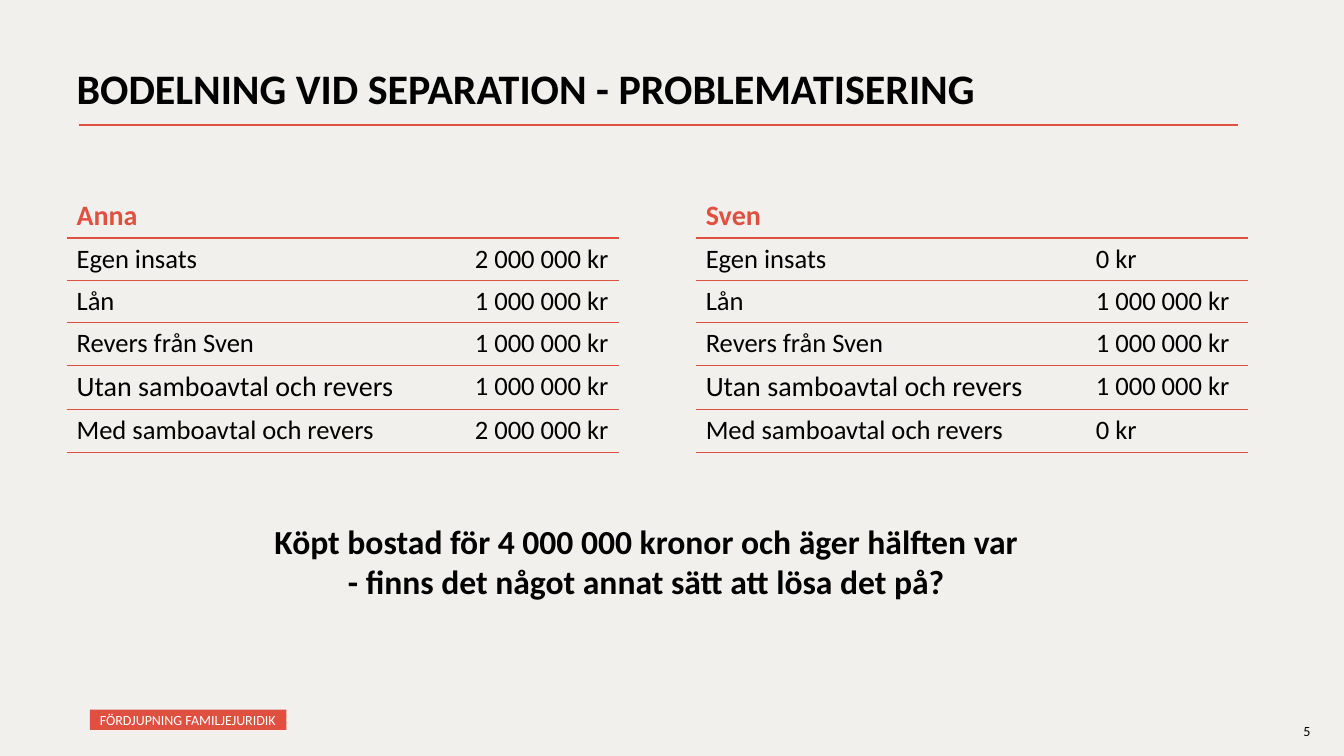
import pptx
import pptx.dml.color
import pptx.enum.shapes
import pptx.enum.text
import pptx.oxml
import pptx.oxml.ns
import pptx.util

Inches = pptx.util.Inches
Pt = pptx.util.Pt
RGBColor = pptx.dml.color.RGBColor
PP_ALIGN = pptx.enum.text.PP_ALIGN
ANCHOR = pptx.enum.text.MSO_ANCHOR
AUTO_SIZE = pptx.enum.text.MSO_AUTO_SIZE

PAPER = RGBColor(0xF1, 0xF0, 0xEC)
CORAL = RGBColor(0xE0, 0x50, 0x40)
BLACK = RGBColor(0, 0, 0)
WHITE = RGBColor(0xFF, 0xFF, 0xFF)
FONT = "Calibri"
NO_STYLE = "{2D5ABB26-0587-4C30-8999-92F81FD0307C}"

LABELS = ["Egen insats", "Lån", "Revers från Sven",
          "Utan samboavtal och revers", "Med samboavtal och revers"]
LARGER_LABEL = "Utan samboavtal och revers"
ANNA_AMOUNTS = ["2 000 000 kr", "1 000 000 kr", "1 000 000 kr",
                "1 000 000 kr", "2 000 000 kr"]
SVEN_AMOUNTS = ["0 kr", "1 000 000 kr", "1 000 000 kr", "1 000 000 kr", "0 kr"]


def place(shape, box):
    shape.left, shape.top, shape.width, shape.height = map(Inches, box)


def add_text(para, text, size, color=BLACK, bold=False):
    span = para.add_run()
    span.text = text
    span.font.name = FONT
    span.font.size = Pt(size)
    span.font.bold = bold
    span.font.color.rgb = color


def add_title(page, box, text):
    title = page.shapes.title
    place(title, box)
    frame = title.text_frame
    frame.auto_size = AUTO_SIZE.NONE
    frame.vertical_anchor = ANCHOR.TOP
    para = frame.paragraphs[0]
    para.alignment = PP_ALIGN.LEFT
    para.line_spacing = 0.9
    add_text(para, text, 30, bold=True)


def add_title_rule(page, left, right, top):
    rule = page.shapes.add_connector(
        pptx.enum.shapes.MSO_CONNECTOR.STRAIGHT,
        Inches(left), Inches(top), Inches(right), Inches(top))
    rule.line.color.rgb = CORAL
    rule.line.width = Pt(1.5)
    rule._element.spPr.append(pptx.oxml.parse_xml(
        f'<a:effectLst {pptx.oxml.ns.nsdecls("a")}/>'))


def add_course_tag(page, box, text):
    tag = page.placeholders[1]
    place(tag, box)
    tag.fill.solid()
    tag.fill.fore_color.rgb = CORAL
    frame = tag.text_frame
    frame.auto_size = AUTO_SIZE.NONE
    frame.vertical_anchor = ANCHOR.MIDDLE
    frame.margin_left, frame.margin_top = Inches(0.1), Inches(0.08)
    frame.margin_right, frame.margin_bottom = Inches(0.04), Inches(0.05)
    para = frame.paragraphs[0]
    properties = para._p.get_or_add_pPr()
    properties.set("marL", "0")
    properties.set("indent", "0")
    properties.append(pptx.oxml.parse_xml(
        f'<a:buNone {pptx.oxml.ns.nsdecls("a")}/>'))
    para.line_spacing = 0.9
    para.space_before = Pt(0)
    add_text(para, text, 10, WHITE)


def set_bottom_border(cell, width):
    cell._tc.get_or_add_tcPr().insert(0, pptx.oxml.parse_xml(
        f'<a:lnB {pptx.oxml.ns.nsdecls("a")} w="{Pt(width)}"><a:solidFill>'
        f'<a:srgbClr val="{CORAL}"/></a:solidFill></a:lnB>'))


def add_person_table(page, box, label_width, person, amounts):
    rows = [(person, "")] + list(zip(LABELS, amounts))
    frame = page.shapes.add_table(len(rows), 2, *map(Inches, box))
    table = frame.table
    table.first_row = table.horz_banding = False
    table._tbl.tblPr.find(pptx.oxml.ns.qn("a:tableStyleId")).text = NO_STYLE
    table.columns[0].width = Inches(label_width)
    table.columns[1].width = Inches(box[2] - label_width)
    for row_index, texts in enumerate(rows):
        table.rows[row_index].height = Inches(0.41)
        is_header = row_index == 0
        for column_index, text in enumerate(texts):
            cell = table.cell(row_index, column_index)
            cell.fill.background()
            set_bottom_border(cell, 1 if is_header else 0.5)
            if text:
                size = 20 if is_header or text == LARGER_LABEL else 19
                add_text(cell.text_frame.paragraphs[0], text, size,
                         CORAL if is_header else BLACK, is_header)


def add_text_box(page, box, lines, size, alignment, bold=False):
    frame = page.shapes.add_textbox(*map(Inches, box)).text_frame
    frame.word_wrap = True
    for index, line in enumerate(lines):
        para = frame.add_paragraph() if index else frame.paragraphs[0]
        para.alignment = alignment
        add_text(para, line, size, bold=bold)


def build_separation_page(deck):
    page = deck.slides.add_slide(deck.slide_layouts[1])
    page.background.fill.solid()
    page.background.fill.fore_color.rgb = PAPER
    add_title(page, (0.66, 0.63, 11.5, 1.08),
              "BODELNING VID SEPARATION - PROBLEMATISERING")
    add_title_rule(page, 0.78, 12.28, 1.24)
    add_person_table(page, (0.66, 1.92, 5.48, 2.53), 3.95, "Anna", ANNA_AMOUNTS)
    add_person_table(page, (6.9, 1.92, 5.48, 2.53), 3.87, "Sven", SVEN_AMOUNTS)
    add_text_box(page, (2.03, 5.12, 8.76, 0.91),
                 ["Köpt bostad för 4 000 000 kronor och äger hälften var",
                  "- finns det något annat sätt att lösa det på?"],
                 24, PP_ALIGN.CENTER, bold=True)
    add_course_tag(page, (0.89, 7.04, 1.95, 0.2), "FÖRDJUPNING FAMILJEJURIDIK")
    add_text_box(page, (12.83, 7.12, 0.4, 0.27), ["5"], 10, PP_ALIGN.LEFT)


def main():
    deck = pptx.Presentation()
    deck.slide_width = Inches(13.33)
    deck.slide_height = Inches(7.5)
    build_separation_page(deck)
    deck.save("out.pptx")


if __name__ == "__main__":
    main()
